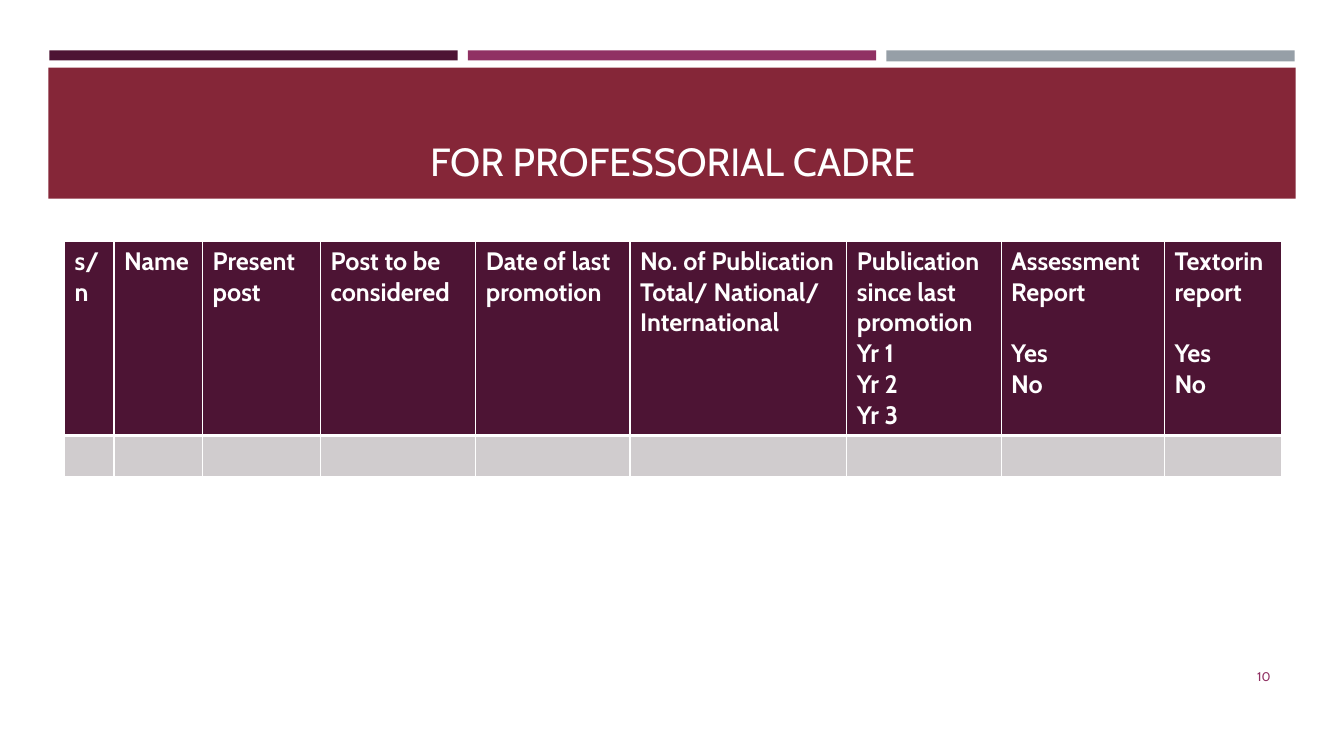
from dataclasses import dataclass

from lxml.etree import SubElement
from pptx import Presentation
from pptx.dml.color import RGBColor
from pptx.enum.shapes import MSO_SHAPE as Shape
from pptx.enum.text import MSO_ANCHOR as Anchor, MSO_AUTO_SIZE as AutoSize, PP_ALIGN as Align
from pptx.oxml.ns import qn
from pptx.util import Inches, Pt

FONT = "Cabin"
COLORS = {
    "plum": "4D1434",
    "magenta": "903163",
    "slate": "969FA7",
    "crimson": "852638",
    "pale": "D0CCCE",
    "white": "FFFFFF",
}


@dataclass
class Band:
    left: float
    top: float
    width: float
    height: float
    color: str


@dataclass
class Column:
    width: float
    heading: str
    options: tuple[str, ...] = ()
    option_gap: float = 0


BANDS = [
    Band(0.49, 0.5, 4.05, 0.1, "plum"),
    Band(8.79, 0.5, 4.05, 0.11, "slate"),
    Band(4.64, 0.5, 4.05, 0.1, "magenta"),
    Band(0.48, 0.67, 12.37, 1.3, "crimson"),
]
COLUMNS = [
    Column(0.49, "s/n"),
    Column(0.88, "Name"),
    Column(1.17, "Present post"),
    Column(1.54, "Post to be considered"),
    Column(1.53, "Date of last promotion"),
    Column(2.15, "No. of Publication", ("Total/ National/ International",)),
    Column(1.53, "Publication since last promotion", ("Yr 1", "Yr 2", "Yr 3")),
    Column(1.62, "Assessment Report", ("Yes", "No"), 22),
    Column(1.16, "Textorin report", ("Yes", "No"), 22),
]
ROW_HEIGHTS = [1.9, 0.41]


def rgb(color: str) -> RGBColor:
    return RGBColor.from_string(COLORS[color])


def style_text(frame, size: float, color: str, align=Align.LEFT, bold: bool = False) -> None:
    for paragraph in frame.paragraphs:
        paragraph.alignment = align
        for run in paragraph.runs:
            run.font.name = FONT
            run.font.size = Pt(size)
            run.font.bold = bold
            run.font.color.rgb = rgb(color)


def draw_band(slide, band: Band):
    bar = slide.shapes.add_shape(
        Shape.RECTANGLE, Inches(band.left), Inches(band.top), Inches(band.width), Inches(band.height)
    )
    bar.shadow.inherit = False
    bar.fill.solid()
    bar.fill.fore_color.rgb = rgb(band.color)
    bar.line.fill.background()
    return bar


def style_cell(cell, color: str, top: float, bottom: float) -> None:
    properties = cell._tc.get_or_add_tcPr()
    for side, width in {"L": 1, "R": 1, "T": top, "B": bottom}.items():
        border = SubElement(properties, qn(f"a:ln{side}"), w=str(Pt(width)))
        fill = SubElement(border, qn("a:solidFill"))
        SubElement(fill, qn("a:srgbClr"), val=COLORS["white"])
    cell.fill.solid()
    cell.fill.fore_color.rgb = rgb(color)


def draw_title(slide, banner) -> None:
    title = slide.shapes.title
    banner._element.addnext(title._element)
    title.left, title.top = Inches(0.64), Inches(0.77)
    title.width, title.height = Inches(12.06), Inches(1.11)
    frame = title.text_frame
    frame.text = "FOR PROFESSORIAL CADRE"
    frame.auto_size = AutoSize.NONE
    frame.word_wrap = True
    frame.vertical_anchor = Anchor.BOTTOM
    style_text(frame, 28, "white", Align.CENTER)


def draw_cadre_table(slide) -> None:
    table = slide.shapes.add_table(
        len(ROW_HEIGHTS), len(COLUMNS), Inches(0.64), Inches(2.39), Inches(12.06), Inches(sum(ROW_HEIGHTS))
    ).table
    table.horz_banding = False
    for row, height in zip(table.rows, ROW_HEIGHTS):
        row.height = Inches(height)
    for index, column in enumerate(COLUMNS):
        table.columns[index].width = Inches(column.width)
        header = table.cell(0, index)
        frame = header.text_frame
        frame.text = "\n".join((column.heading, *column.options))
        style_text(frame, 18, "white", bold=True)
        if column.option_gap:
            frame.paragraphs[1].space_before = Pt(column.option_gap)
        style_cell(header, "plum", 1, 3)
        style_cell(table.cell(1, index), "pale", 3, 1)


def draw_page_number(slide) -> None:
    page_number = slide.shapes.add_textbox(Inches(11.55), Inches(6.51), Inches(1.15), Inches(0.4))
    frame = page_number.text_frame
    frame.text = "10"
    frame.word_wrap = True
    frame.vertical_anchor = Anchor.MIDDLE
    style_text(frame, 9, "magenta", Align.RIGHT)


def main() -> None:
    deck = Presentation()
    deck.slide_width, deck.slide_height = Inches(13.33), Inches(7.5)
    slide = deck.slides.add_slide(deck.slide_layouts[5])
    *_, banner = [draw_band(slide, band) for band in BANDS]
    draw_title(slide, banner)
    draw_cadre_table(slide)
    draw_page_number(slide)
    deck.save("out.pptx")


if __name__ == "__main__":
    main()
